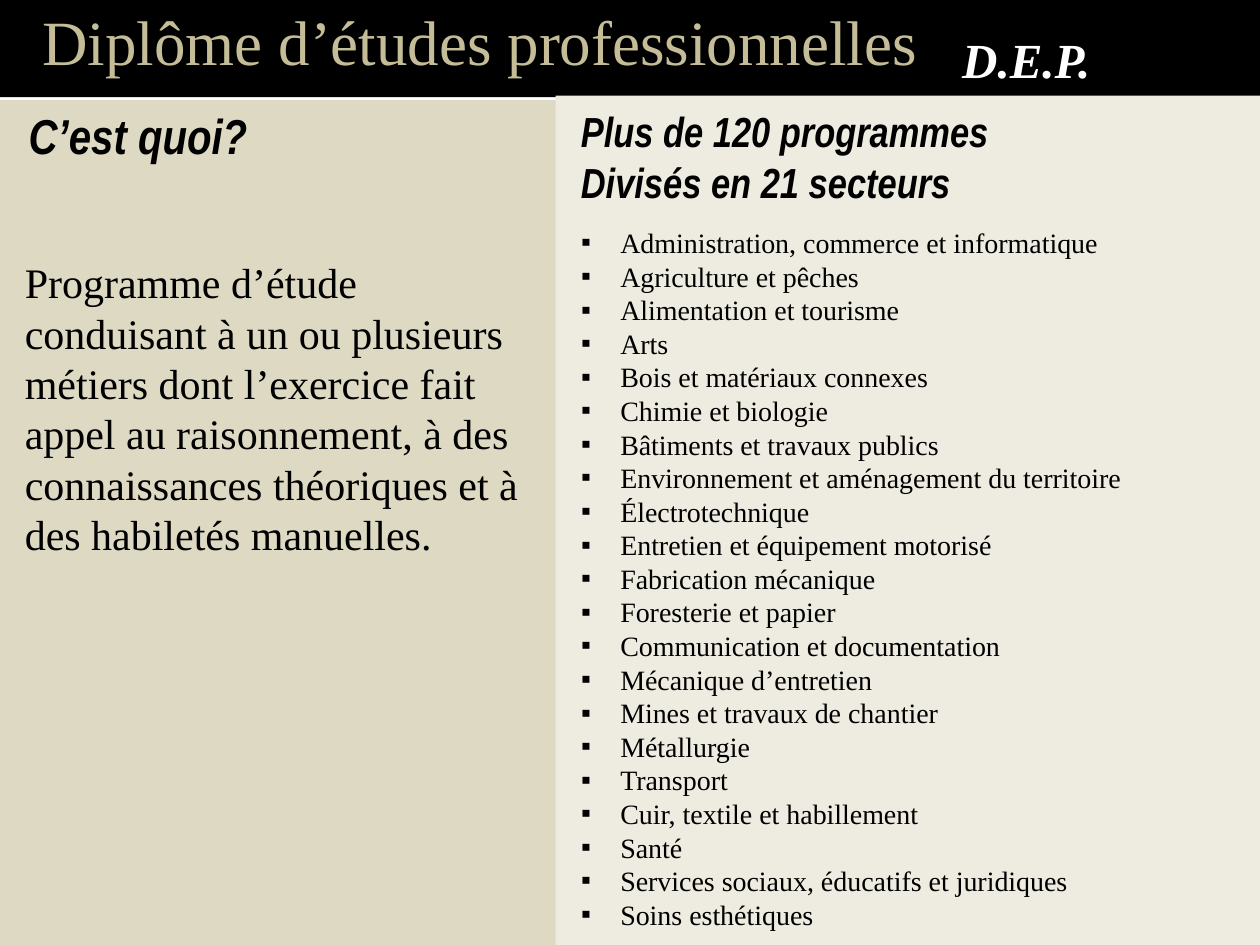
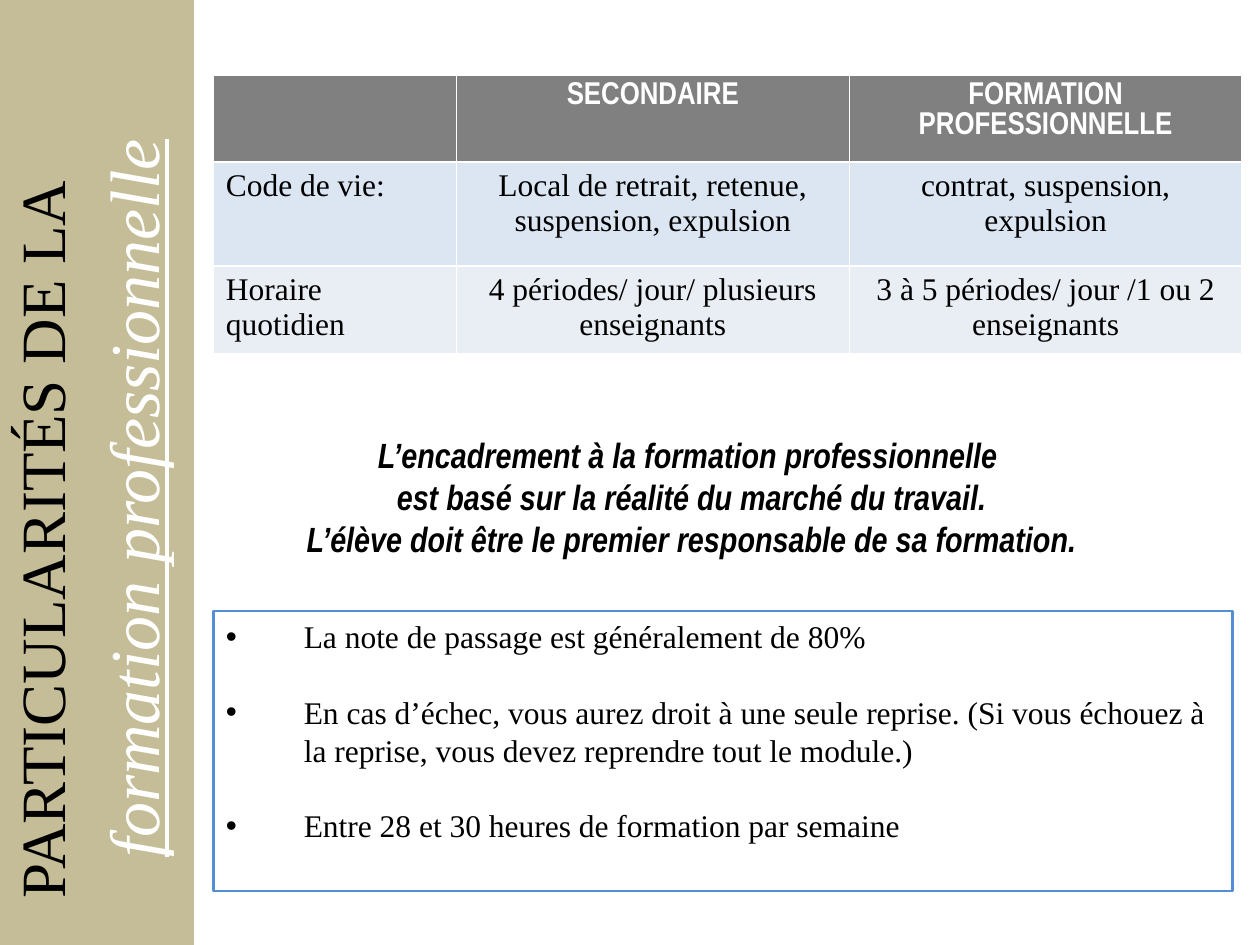
from lxml.etree import SubElement
from pptx import Presentation
from pptx.dml.color import RGBColor
from pptx.enum.shapes import MSO_SHAPE
from pptx.enum.text import MSO_ANCHOR, MSO_AUTO_SIZE, PP_ALIGN
from pptx.oxml.ns import qn
from pptx.util import Cm, Pt

SERIF, NARROW = "Times New Roman", "Arial Narrow"
BLACK, WHITE, TAN = "000000", "FFFFFF", "C4BD97"
LEFT, CENTER = PP_ALIGN.LEFT, PP_ALIGN.CENTER


def rgb(value):
    return RGBColor.from_string(value)


def write(sp, at, lines, size, font=SERIF, color=BLACK, align=LEFT, bold=False,
          italic=False, underline=False, bullet=None, indent=0, gap=0, turn=0):
    """Place a text shape (cm) and fill it, one paragraph per line."""
    sp.left, sp.top, sp.width, sp.height = [Cm(v) for v in at]
    sp.rotation = turn
    tf = sp.text_frame
    tf.word_wrap = True
    tf.auto_size = MSO_AUTO_SIZE.NONE
    tf.vertical_anchor = MSO_ANCHOR.TOP
    for i, line in enumerate(lines):
        p = tf.add_paragraph() if i else tf.paragraphs[0]
        p.alignment = align
        p.line_spacing = Pt(round(size * 1.2, 1))
        p.space_before = Pt(gap if i else 0)
        if bullet:
            pPr = p._p.get_or_add_pPr()
            pPr.set("marL", str(Cm(indent)))
            pPr.set("indent", str(-Cm(indent)))
            SubElement(pPr, qn("a:buFont")).set("typeface", "Arial")
            SubElement(pPr, qn("a:buChar")).set("char", bullet)
        for j, part in enumerate(line.split("\n")):
            if j:
                p.add_line_break()
            r = p.add_run()
            r.text = part
            r.font.name, r.font.size = font, Pt(size)
            r.font.bold, r.font.italic, r.font.underline = bold, italic, underline
            r.font.color.rgb = rgb(color)


prs = Presentation()
prs.slide_width, prs.slide_height = Cm(25.4), Cm(19.05)

# Slides with their coloured bands behind the placeholders
bands = [
    [((0, 0, 25.4, 1.96), BLACK),
     ((0, 2.02, 11.25, 17.03), "DDD9C3"),
     ((11.2, 1.93, 14.2, 17.12), "EEECE1")],
    [((0, 0, 3.91, 19.05), TAN)],
]
slides = []
for slide_bands in bands:
    s = prs.slides.add_slide(prs.slide_layouts[1])
    for at, color in slide_bands:
        band = s.shapes.add_shape(MSO_SHAPE.RECTANGLE, *[Cm(v) for v in at])
        band.shadow.inherit = False
        band.fill.solid()
        band.fill.fore_color.rgb = rgb(color)
        band.line.fill.background()
    for ph in list(s.placeholders):
        s.shapes.element.append(ph.element)
    slides.append(s)
dep, traits = slides

# Slide 1: title band
write(dep.shapes.title, (0, -0.08, 19.35, 1.8),
      ["Diplôme d’études professionnelles"], 36, color=TAN, align=CENTER)
write(dep.shapes.add_textbox(0, 0, 0, 0), (13.69, 0.48, 14, 1.45),
      ["D.E.P."], 28, color=WHITE, align=CENTER, bold=True, italic=True)

# Slide 1: definition
write(dep.shapes.add_textbox(0, 0, 0, 0), (0.33, 2.01, 6, 1.45),
      ["C’est quoi?"], 28, NARROW, bold=True, italic=True)
write(dep.shapes.add_textbox(0, 0, 0, 0), (0.25, 5.05, 10.77, 6.4),
      ["Programme d’étude conduisant à un ou plusieurs métiers dont l’exercice "
       "fait appel au raisonnement, à des connaissances théoriques et à des "
       "habiletés manuelles."], 24)

# Slide 1: sectors
write(dep.shapes.add_textbox(0, 0, 0, 0), (11.46, 2.01, 12, 2.31),
      ["Plus de 120 programmes", "Divisés en 21 secteurs"],
      24, NARROW, bold=True, italic=True)
sectors = [
    "Administration, commerce et informatique",
    "Agriculture et pêches",
    "Alimentation et tourisme",
    "Arts",
    "Bois et matériaux connexes",
    "Chimie et biologie",
    "Bâtiments et travaux publics",
    "Environnement et aménagement du territoire",
    "Électrotechnique",
    "Entretien et équipement motorisé",
    "Fabrication mécanique",
    "Foresterie et papier",
    "Communication et documentation",
    "Mécanique d’entretien",
    "Mines et travaux de chantier",
    "Métallurgie",
    "Transport",
    "Cuir, textile et habillement",
    "Santé",
    "Services sociaux, éducatifs et juridiques",
    "Soins esthétiques",
]
write(dep.placeholders[1], (11.46, 4.42, 13.44, 14.6), sectors, 16,
      bullet="▪", indent=0.79)

# Slide 2: vertical title
write(traits.shapes.title, (-6.78, 9.88, 15.19, 1.8),
      ["PARTICULARITÉS DE LA"], 36, turn=270)
write(traits.shapes.add_textbox(0, 0, 0, 0), (-5.94, 7.95, 17.2, 1.96),
      ["formation professionnelle"], 40, color=WHITE, italic=True,
      underline=True, turn=270)

# Slide 2: comparison table
rows = [
    ["", "SECONDAIRE", "FORMATION PROFESSIONNELLE"],
    ["Code de vie:", "Local de retrait, retenue, suspension, expulsion",
     "contrat, suspension, expulsion"],
    ["Horaire quotidien", "4 périodes/ jour/ plusieurs enseignants",
     "3 à 5 périodes/ jour /1 ou 2 enseignants"],
]
fills = ["808080", "DCE6F2", "E9EDF4"]
table = traits.shapes.add_table(3, 3, Cm(4.3), Cm(1.52), Cm(20.74), Cm(5.62)).table
for col, width in zip(table.columns, [4.9, 7.92, 7.92]):
    col.width = Cm(width)
for row, height in zip(table.rows, [1.75, 2.09, 1.78]):
    row.height = Cm(height)
for i, texts in enumerate(rows):
    for j, text in enumerate(texts):
        cell = table.cell(i, j)
        cell.fill.solid()
        cell.fill.fore_color.rgb = rgb(fills[i])
        if not text:
            continue
        p = cell.text_frame.paragraphs[0]
        p.alignment = CENTER if j else LEFT
        p.line_spacing = Pt(20 if i else 17)
        r = p.add_run()
        r.text = text
        r.font.name, r.font.size = (SERIF if i else NARROW), Pt(18)
        r.font.bold = i == 0
        r.font.color.rgb = rgb(BLACK if i else WHITE)

# Slide 2: key message
write(traits.shapes.add_textbox(0, 0, 0, 0), (5.36, 8.61, 17.17, 2.82),
      ["L’encadrement à la formation professionnelle \n"
       "est basé sur la réalité du marché du travail.",
       "L’élève doit être le premier responsable de sa formation."],
      20, NARROW, align=CENTER, bold=True, italic=True)

# Slide 2: framed rules
rules = traits.placeholders[1]
write(rules, (4.3, 12.32, 20.55, 5.64),
      ["La note de passage est généralement de 80%",
       "En cas d’échec, vous aurez droit à une seule reprise. (Si vous échouez à "
       "la reprise, vous devez reprendre tout le module.)",
       "Entre 28 et 30 heures de formation par semaine"],
      18, bullet="•", indent=1.57, gap=21.6)
rules.line.color.rgb = rgb("558ED5")
rules.line.width = Pt(1.5)

prs.save("out.pptx")
